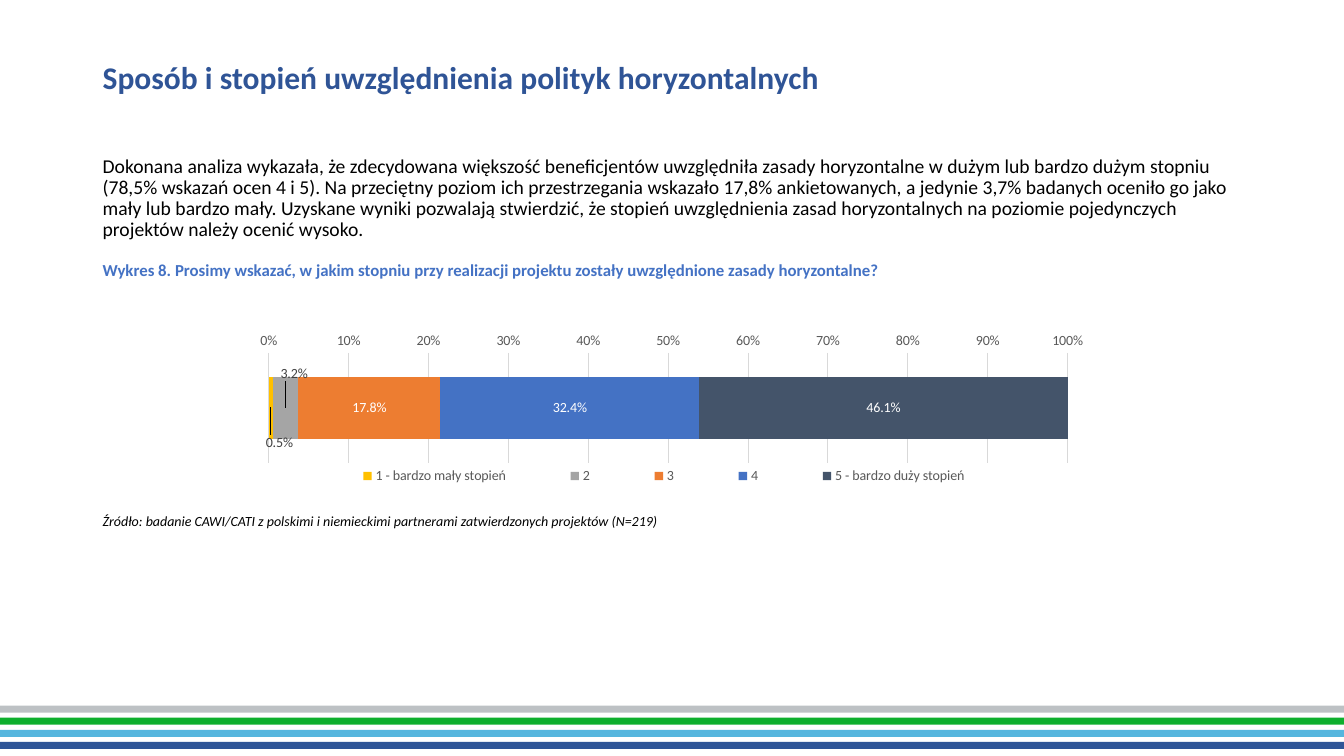
from dataclasses import dataclass

from lxml.etree import SubElement
from pptx import Presentation
from pptx.chart.data import CategoryChartData
from pptx.dml.color import RGBColor
from pptx.enum.chart import XL_CHART_TYPE, XL_LABEL_POSITION, XL_LEGEND_POSITION, XL_TICK_MARK
from pptx.enum.shapes import MSO_SHAPE
from pptx.enum.text import MSO_ANCHOR
from pptx.oxml import parse_xml
from pptx.oxml.ns import nsdecls, qn
from pptx.util import Inches, Pt


@dataclass(frozen=True)
class Theme:
    """Colours and type sizes of the slide."""
    font: str = "Calibri"
    title: str = "2F5496"
    caption: str = "4472C4"
    ink: str = "000000"
    axis: str = "595959"
    grid: str = "D9D9D9"
    dark_label: str = "404040"
    light_label: str = "FFFFFF"
    stripes: tuple = ("BDC1C4", "0EAF2D", "56B6DE", "2F5597")
    title_size: float = 22.5
    body_size: float = 14
    caption_size: float = 12
    small_size: float = 10


class SlideBuilder:
    """Draws styled elements on one slide."""

    def __init__(self, slide, theme):
        """Keep the slide and its theme."""
        self.slide = slide
        self.theme = theme

    def style(self, font, size, color, bold=False, italic=False):
        """Apply the theme font with a size and colour."""
        font.name, font.size = self.theme.font, Pt(size)
        font.bold, font.italic = bold, italic
        font.color.rgb = RGBColor.from_string(color)

    def stripe(self, top, color):
        """Draw a full-width band."""
        band = self.slide.shapes.add_shape(
            MSO_SHAPE.RECTANGLE, 0, Inches(top), Inches(13.33), Inches(0.07))
        band.shadow.inherit = False
        band.fill.solid()
        band.fill.fore_color.rgb = RGBColor.from_string(color)
        band.line.fill.background()

    def text(self, wording, top, width, height, size, color, spacing=1.0,
             after=0, anchor=MSO_ANCHOR.TOP, bold=False, italic=False):
        """Add a wrapped paragraph at the left margin."""
        frame = self.slide.shapes.add_textbox(
            Inches(0.92), Inches(top), Inches(width), Inches(height)).text_frame
        frame.word_wrap = True
        frame.vertical_anchor = anchor
        frame.text = wording
        paragraph = frame.paragraphs[0]
        paragraph.line_spacing = spacing
        paragraph.space_after = Pt(after)
        self.style(paragraph.runs[0].font, size, color, bold, italic)

    def place(self, parent, index, target=None, **fractions):
        """Give a chart part a manual layout."""
        for old in parent.findall(qn("c:layout")):
            parent.remove(old)
        layout = parse_xml(f"<c:layout {nsdecls('c')}><c:manualLayout/></c:layout>")
        if target:
            SubElement(layout[0], qn("c:layoutTarget")).set("val", target)
        if "w" in fractions:
            for mode in ("xMode", "yMode"):
                SubElement(layout[0], qn(f"c:{mode}")).set("val", "edge")
        for name, value in fractions.items():
            SubElement(layout[0], qn(f"c:{name}")).set("val", str(value))
        parent.insert(index, layout)

    def stacked_bar(self, ratings):
        """Add the single stacked bar with its axis and legend."""
        theme = self.theme
        data = CategoryChartData(number_format="0.0%")
        data.categories = ["1"]
        for name, share, *_ in ratings:
            data.add_series(name, [share])
        chart = self.slide.shapes.add_chart(
            XL_CHART_TYPE.BAR_STACKED_100, Inches(2.41), Inches(3.21),
            Inches(8.52), Inches(1.71), data).chart
        self.style(chart.font, theme.small_size, theme.ink)
        chart.has_title = False
        plot = chart.plots[0]
        plot.gap_width, plot.overlap, plot.vary_by_categories = 80, 100, False
        chart.category_axis.visible = False
        chart.category_axis.reverse_order = True
        self.share_axis(chart.value_axis)
        for series, (_, _, fill, label_color, shift) in zip(plot.series, ratings):
            self.segment(series, fill, label_color, shift)
        chart.has_legend = True
        legend = chart.legend
        legend.position = XL_LEGEND_POSITION.BOTTOM
        legend.include_in_layout = False
        self.style(legend.font, theme.small_size, theme.axis)
        self.place(legend._element, 1, x=0.07, y=0.82, w=0.84, h=0.13)
        self.place(plot._element.getparent(), 0, "inner", x=0.03, y=0.17, w=0.93, h=0.64)

    def share_axis(self, axis):
        """Style the percentage axis."""
        axis.minimum_scale, axis.maximum_scale, axis.major_unit = 0, 1, 0.1
        axis.major_tick_mark = axis.minor_tick_mark = XL_TICK_MARK.NONE
        axis.tick_labels.number_format = "0%"
        axis.tick_labels.number_format_is_linked = False
        self.style(axis.tick_labels.font, self.theme.small_size, self.theme.axis)
        axis.format.line.fill.background()
        axis.has_major_gridlines = True
        gridline = axis.major_gridlines.format.line
        gridline.width = Pt(0.75)
        gridline.color.rgb = RGBColor.from_string(self.theme.grid)

    def segment(self, series, fill, label_color, shift):
        """Colour a bar segment and label its share."""
        series.format.fill.solid()
        series.format.fill.fore_color.rgb = RGBColor.from_string(fill)
        labels = series.data_labels
        labels.show_value = True
        labels.number_format = "0.0%"
        labels.number_format_is_linked = False
        labels.position = XL_LABEL_POSITION.CENTER
        self.style(labels.font, self.theme.small_size, label_color)
        if shift:
            label = series.points[0].data_label
            label.position = XL_LABEL_POSITION.CENTER
            self.style(label.font, self.theme.small_size, label_color)
            self.place(labels._element.find(qn("c:dLbl")), 1, x=shift[0], y=shift[1])


def main():
    """Build and save the slide."""
    deck = Presentation()
    deck.slide_width, deck.slide_height = Inches(13.33), Inches(7.5)
    theme = Theme()
    builder = SlideBuilder(deck.slides.add_slide(deck.slide_layouts[6]), theme)
    for row, color in enumerate(theme.stripes):
        builder.stripe(7 + 0.12 * row, color)
    builder.text(
        "Źródło: badanie CAWI/CATI z polskimi i niemieckimi partnerami zatwierdzonych projektów (N=219)",
        4.95, 6.66, 0.33, theme.small_size, theme.ink, spacing=1.5, after=8, italic=True)
    builder.stacked_bar([
        ("1 - bardzo mały stopień", 0.005, "FFC000", theme.dark_label, (0.01, 0.2)),
        ("2", 0.032, "A5A5A5", theme.dark_label, (0.01, -0.2)),
        ("3", 0.178, "ED7D31", theme.light_label, None),
        ("4", 0.324, "4472C4", theme.light_label, None),
        ("5 - bardzo duży stopień", 0.461, "44546A", theme.light_label, None),
    ])
    builder.text(
        "Wykres 8. Prosimy wskazać, w jakim stopniu przy realizacji projektu zostały "
        "uwzględnione zasady horyzontalne?",
        2.53, 11.03, 0.3, theme.caption_size, theme.caption, after=10, bold=True)
    builder.text(
        "Dokonana analiza wykazała, że zdecydowana większość beneficjentów uwzględniła zasady "
        "horyzontalne w dużym lub bardzo dużym stopniu (78,5% wskazań ocen 4 i 5). Na przeciętny "
        "poziom ich przestrzegania wskazało 17,8% ankietowanych, a jedynie 3,7% badanych oceniło "
        "go jako mały lub bardzo mały. Uzyskane wyniki pozwalają stwierdzić, że stopień "
        "uwzględnienia zasad horyzontalnych na poziomie pojedynczych projektów należy ocenić wysoko.",
        1.5, 11.5, 4.76, theme.body_size, theme.ink, spacing=0.9)
    builder.text(
        "Sposób i stopień uwzględnienia polityk horyzontalnych", 0.34, 11.5, 0.65,
        theme.title_size, theme.title, spacing=1.5, anchor=MSO_ANCHOR.MIDDLE, bold=True)
    deck.save("out.pptx")


if __name__ == "__main__":
    main()
